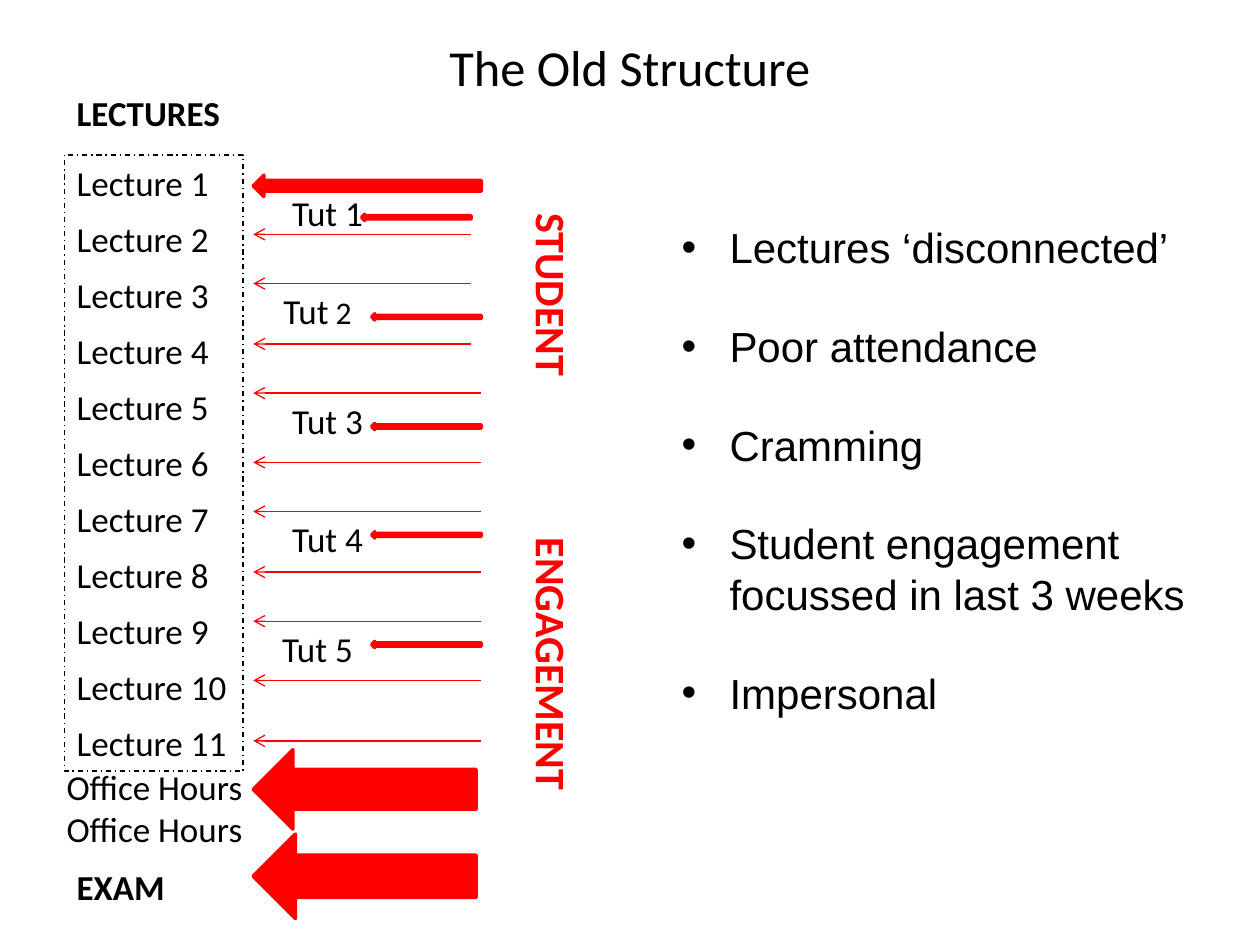
from lxml.etree import SubElement
from pptx import Presentation
from pptx.dml.color import RGBColor
from pptx.enum.dml import MSO_LINE
from pptx.enum.shapes import MSO_CONNECTOR, MSO_SHAPE
from pptx.enum.text import MSO_ANCHOR, MSO_AUTO_SIZE, PP_ALIGN
from pptx.oxml.ns import qn
from pptx.util import Inches, Pt

RED, BLACK = "FF0000", "000000"
hue = RGBColor.from_string


def grid(*cells):
    """Turn cells of a 100 by 75 grid into lengths."""
    return [Inches(cell / 10) for cell in cells]


def write(shape, text, size=20, color=BLACK, bold=False,
          align=PP_ALIGN.LEFT, font="Calibri", after=0):
    frame = shape.text_frame
    frame.text = text
    frame.word_wrap = True
    frame.auto_size = MSO_AUTO_SIZE.NONE
    for para in frame.paragraphs:
        para.alignment = align
        para.space_before, para.space_after = Pt(0), Pt(after)
        for run in para.runs:
            run.font.name, run.font.size = font, Pt(size)
            run.font.bold = bold
            run.font.color.rgb = hue(color)


deck = Presentation()
deck.slide_width, deck.slide_height = grid(100, 75)
slide = deck.slides.add_slide(deck.slide_layouts[1])
shapes = slide.shapes

# Title
title = shapes.title
title.left, title.top, title.width, title.height = grid(5, 3, 90, 4.6)
write(title, "The Old Structure", 28.8, align=PP_ALIGN.CENTER)
title.text_frame.vertical_anchor = MSO_ANCHOR.MIDDLE

# Problems: a blank line's height between bullets
body = slide.placeholders[1]
body.left, body.top, body.width, body.height = grid(53.1, 17.1, 44.9, 49.5)
points = ["Lectures ‘disconnected’", "Poor attendance", "Cramming",
          "Student engagement focussed in last 3 weeks", "Impersonal"]
write(body, "\n".join(points), 24, font="Arial", after=27.6)
for para in body.text_frame.paragraphs:
    props = para._p.get_or_add_pPr()
    props.set("marL", str(Inches(0.38)))
    props.set("indent", str(-Inches(0.38)))

# Lecture list
frame = shapes.add_shape(MSO_SHAPE.RECTANGLE, *grid(5.1, 12.3, 14.2, 48.9))
frame.shadow.inherit = False
frame.fill.background()
frame.line.color.rgb = hue(BLACK)
frame.line.width = Pt(0.75)
frame.line.dash_style = MSO_LINE.DASH_DOT
write(frame, "\n".join(f"Lecture {n}" for n in range(1, 12)), after=8)
frame.text_frame.vertical_anchor = MSO_ANCHOR.TOP

# Headings and office hours
for text, left, top, high, bold in [
        ("LECTURES", 5.1, 6.8, 4.4, True),
        ("Office Hours\nOffice Hours", 4.3, 60.3, 7.7, False),
        ("EXAM", 5.1, 68.2, 4.4, True)]:
    label = shapes.add_textbox(*grid(left, top, 22, high))
    write(label, text, bold=bold)

# Tutorials
for n, (left, top) in enumerate([(20.1, 14.7), (19.3, 22.5), (20.1, 31.2),
                                 (20.1, 40.6), (19.3, 49.3)], 1):
    label = shapes.add_textbox(*grid(left, top, 11.8, 4.4))
    write(label, f"Tut {n}", align=PP_ALIGN.CENTER)
    if n == 2:
        para = label.text_frame.paragraphs[0]
        first = para.runs[0]
        first.text = "Tut"
        digit = para.add_run()
        digit.text = " 2"
        digit.font.name, digit.font.size = "Calibri", Pt(18)
        digit.font.color.rgb = hue(BLACK)

# Turned words, centred on one column
for text, mid in [("STUDENT", 23.4), ("ENGAGEMENT", 52.7)]:
    word = shapes.add_textbox(*grid(43.85 - 13, mid - 2.5, 26, 5))
    word.rotation = 90
    write(word, text, 24, RED, True, PP_ALIGN.CENTER)

# Thick arrows: first lecture, five tutorials, office hours, exam
for cells in [(20.1, 13.9, 18.1, 1.7), (28.7, 17, 8.7, 0.5),
              *[(29.5, top, 8.7, 0.5) for top in (24.9, 33.6, 42.2, 50.9)],
              (20.1, 59.5, 17.7, 6.3), (20.1, 66.2, 17.7, 6.7)]:
    arrow = shapes.add_shape(MSO_SHAPE.LEFT_ARROW, *grid(*cells))
    arrow.shadow.inherit = False
    arrow.fill.solid()
    arrow.fill.fore_color.rgb = hue(RED)
    arrow.line.color.rgb = hue(RED)
    arrow.line.width = Pt(2)

# Thin arrows: the first three start further left
rows = [18.6, 22.5, 27.3, 31.2, 36.7, 40.6, 45.4, 49.3, 54, 58.8]
for n, row in enumerate(rows):
    start = 37.4 if n < 3 else 38.2
    line = shapes.add_connector(MSO_CONNECTOR.STRAIGHT,
                                *grid(start, row, 20.1, row))
    line.line.color.rgb = hue(RED)
    line.line.width = Pt(0.75)
    SubElement(line.line._get_or_add_ln(), qn("a:tailEnd"), type="arrow")
    SubElement(line._element.spPr, qn("a:effectLst"))

deck.save("out.pptx")
